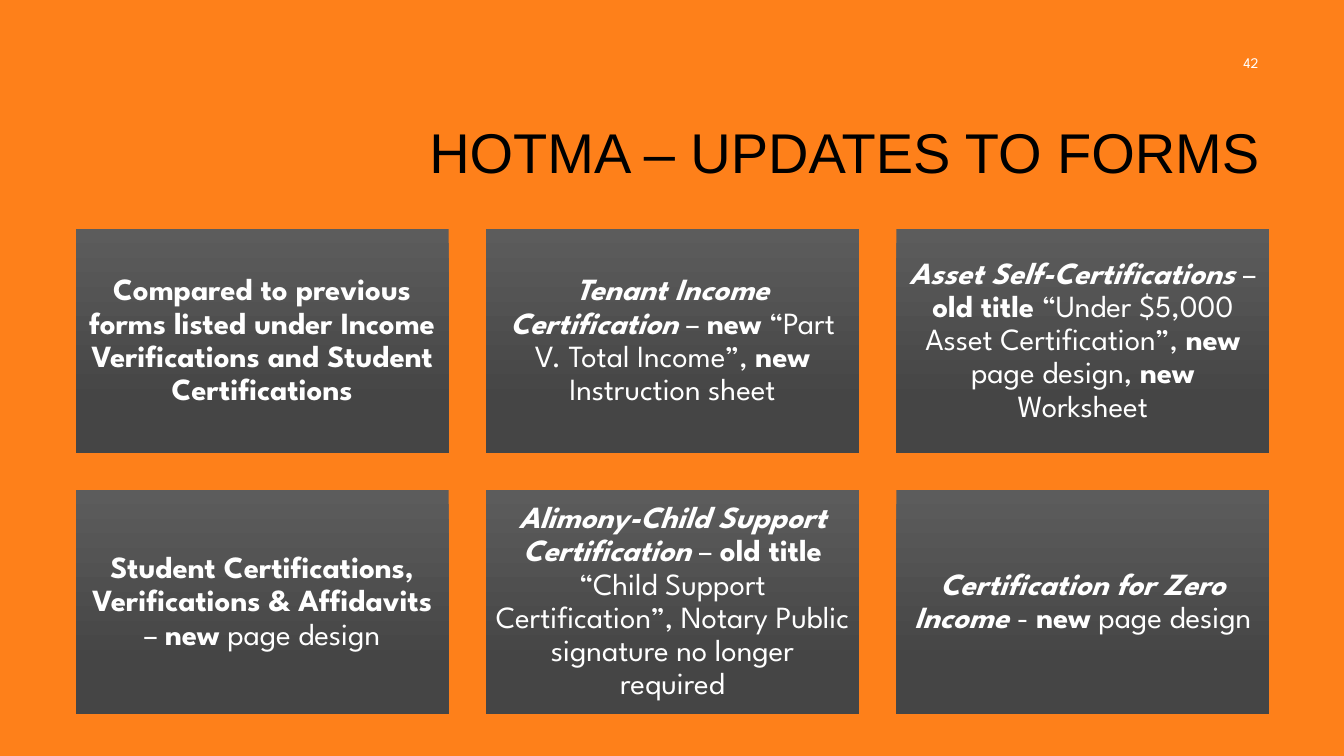
from itertools import product

from pptx import Presentation
from pptx.dml.color import RGBColor
from pptx.enum.shapes import MSO_SHAPE
from pptx.enum.text import MSO_ANCHOR, PP_ALIGN
from pptx.util import Inches, Pt

BODY_FONT = "League Spartan"
STYLES = {
    "plain": {"bold": False, "italic": False},
    "bold": {"bold": True, "italic": False},
    "form": {"bold": True, "italic": True},
}
CARDS = [
    [("Compared to previous forms listed under Income Verifications and "
      "Student Certifications", "bold")],
    [("Tenant Income Certification ", "form"), ("– ", "plain"), ("new", "bold"),
     (" “Part V. Total Income”, ", "plain"), ("new", "bold"),
     (" Instruction sheet", "plain")],
    [("Asset Self-Certifications ", "form"), ("– ", "plain"), ("old title", "bold"),
     (" “Under $5,000 Asset Certification”, ", "plain"), ("new", "bold"),
     (" page design, ", "plain"), ("new", "bold"), (" Worksheet", "plain")],
    [("Student Certifications, Verifications & Affidavits ", "bold"),
     ("– ", "plain"), ("new", "bold"), (" page design", "plain")],
    [("Alimony-Child Support Certification ", "form"), ("– ", "plain"),
     ("old title", "bold"),
     (" “Child Support Certification”, Notary Public signature no longer required",
      "plain")],
    [("Certification for Zero Income ", "form"), ("- ", "plain"), ("new", "bold"),
     (" page design", "plain")],
]


def color(value):
    return RGBColor.from_string(value)


def set_attributes(target, values):
    for name, value in values.items():
        setattr(target, name, value)


def write_text(shape, runs, alignment, font_name, size, text_color, line_spacing=1.0):
    frame = shape.text_frame
    set_attributes(frame, {"word_wrap": True, "vertical_anchor": MSO_ANCHOR.MIDDLE})
    paragraph = frame.paragraphs[0]
    set_attributes(paragraph, {"alignment": alignment, "line_spacing": line_spacing})
    for text, style in runs:
        run = paragraph.add_run()
        run.text = text
        set_attributes(run.font, {"name": font_name, "size": Pt(size), **STYLES[style]})
        run.font.color.rgb = color(text_color)


def add_label(slide, box, text, font_name, size, text_color, line_spacing=1.0):
    label = slide.shapes.add_textbox(*map(Inches, box))
    write_text(label, [(text, "plain")], PP_ALIGN.RIGHT, font_name, size,
               text_color, line_spacing)


def add_card(slide, box, runs):
    card = slide.shapes.add_shape(MSO_SHAPE.RECTANGLE, *map(Inches, box))
    card.shadow.inherit = False
    card.line.fill.background()
    card.fill.gradient()
    card.fill.gradient_angle = 270
    stops = [(0, "5C5C5C"), (0.78, "454545")]
    for stop, (position, shade) in zip(card.fill.gradient_stops, stops):
        stop.position = position
        stop.color.rgb = color(shade)
    sides = ("left", "top", "right", "bottom")
    set_attributes(card.text_frame, {f"margin_{side}": Inches(0.09) for side in sides})
    write_text(card, runs, PP_ALIGN.CENTER, BODY_FONT, 22, "FFFFFF", 0.9)


def main():
    presentation = Presentation()
    set_attributes(presentation, {"slide_width": Inches(13.33),
                                  "slide_height": Inches(7.5)})
    slide = presentation.slides.add_slide(presentation.slide_layouts[6])
    slide.background.fill.solid()
    slide.background.fill.fore_color.rgb = color("FE801A")
    add_label(slide, (3.17, 0.84, 9.42, 1.41), "HOTMA – UPDATES TO FORMS",
              "Arial", 40, "000000", 0.9)
    add_label(slide, (9.58, 0.42, 3, 0.4), "42", BODY_FONT, 10.5, "FFFFFF")
    for (row, column), runs in zip(product(range(2), range(3)), CARDS):
        add_card(slide, (0.75 + 4.07 * column, 2.27 + 2.59 * row, 3.7, 2.22), runs)
    presentation.save("out.pptx")


if __name__ == "__main__":
    main()
